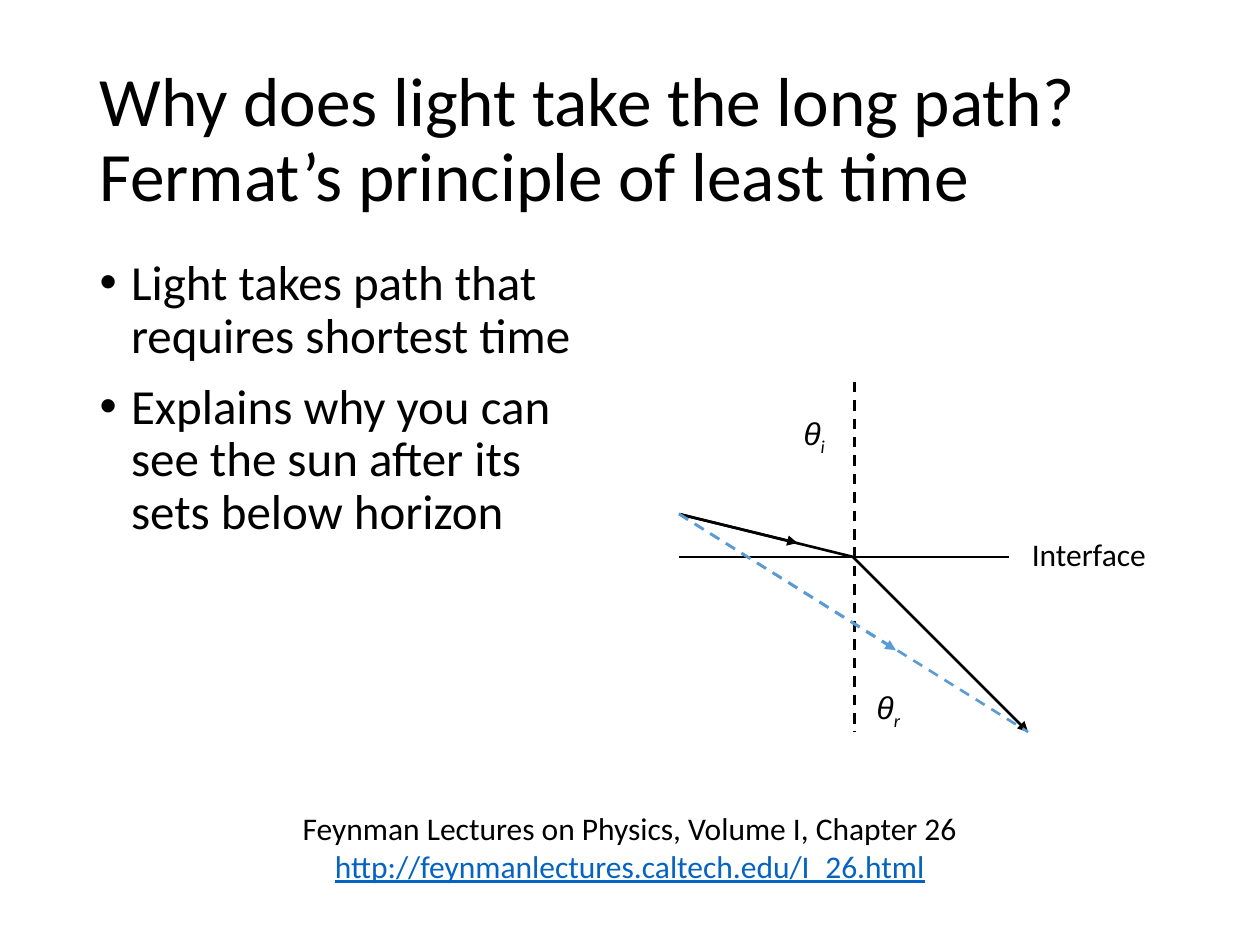
"""Build a slide on Fermat's principle of least time."""
from dataclasses import dataclass
from typing import NamedTuple

from lxml.etree import SubElement
from pptx import Presentation
from pptx.dml.color import RGBColor as Rgb
from pptx.enum.dml import MSO_LINE_DASH_STYLE as Dash
from pptx.enum.shapes import MSO_CONNECTOR_TYPE as Link
from pptx.enum.text import MSO_ANCHOR as Anchor
from pptx.enum.text import MSO_AUTO_SIZE as Fit
from pptx.enum.text import PP_ALIGN as Align
from pptx.oxml.ns import qn
from pptx.util import Inches, Pt

COLS, ROWS = 100, 75
WIDE, HIGH = Inches(10), Inches(7.5)


@dataclass(frozen=True)
class Theme:
    ink: Rgb = Rgb.from_string("000000")
    blue: Rgb = Rgb.from_string("5B9BD5")
    link: Rgb = Rgb.from_string("0563C1")
    face: str = "Calibri"
    greek: str = "Arial"
    title: float = 39.6
    body: float = 28
    note: float = 18
    line: float = 1.5


THEME = Theme()


class Spot(NamedTuple):
    col: float
    row: float


class Area(NamedTuple):
    col: float
    row: float
    cols: float
    rows: float


class Run(NamedTuple):
    text: str
    size: float = THEME.note
    face: str = THEME.face
    color: Rgb = THEME.ink
    slant: bool = False
    under: bool = False
    base: int = 0


class Ray(NamedTuple):
    start: Spot
    end: Spot
    color: Rgb = THEME.ink
    dash: bool = False
    arrow: bool = False


class Label(NamedTuple):
    area: Area
    lines: list[list[Run]]
    align: Align = Align.LEFT


def across(cols: float) -> int:
    return round(WIDE * cols / COLS)


def down(rows: float) -> int:
    return round(HIGH * rows / ROWS)


def place(shape, area: Area) -> None:
    shape.left, shape.top = across(area.col), down(area.row)
    shape.width, shape.height = across(area.cols), down(area.rows)


def add_run(para, run: Run) -> None:
    item = para.add_run()
    item.text = run.text
    font = item.font
    font.size, font.name = Pt(run.size), run.face
    font.color.rgb = run.color
    if run.slant:
        font.italic = True
    if run.under:
        font.underline = True
    if run.base:
        item._r.get_or_add_rPr().set("baseline", str(run.base * 1000))


def add_para(frame, index: int):
    return frame.add_paragraph() if index else frame.paragraphs[0]


def draw_title(shape, area: Area, lines: list[str]) -> None:
    place(shape, area)
    frame = shape.text_frame
    frame.auto_size, frame.vertical_anchor = Fit.NONE, Anchor.MIDDLE
    para = frame.paragraphs[0]
    para.alignment, para.line_spacing = Align.LEFT, 0.9
    for index, text in enumerate(lines):
        if index:
            para.add_line_break()
        add_run(para, Run(text, THEME.title))


def draw_list(shape, area: Area, items: list[str]) -> None:
    place(shape, area)
    frame = shape.text_frame
    frame.auto_size = Fit.NONE
    for index, text in enumerate(items):
        para = add_para(frame, index)
        props = para._p.get_or_add_pPr()
        props.set("marL", str(Inches(0.25)))
        props.set("indent", str(-Inches(0.25)))
        SubElement(props, qn("a:buFont")).set("typeface", THEME.greek)
        SubElement(props, qn("a:buChar")).set("char", "•")
        para.line_spacing = 0.9
        para.space_before = Pt(10 if index else 0)
        add_run(para, Run(text, THEME.body))


def draw_label(slide, label: Label) -> None:
    box = slide.shapes.add_textbox(0, 0, 0, 0)
    place(box, label.area)
    frame = box.text_frame
    frame.word_wrap, frame.auto_size = False, Fit.SHAPE_TO_FIT_TEXT
    for index, runs in enumerate(label.lines):
        para = add_para(frame, index)
        para.alignment = label.align
        for run in runs:
            add_run(para, run)


def draw_ray(slide, ray: Ray) -> None:
    line = slide.shapes.add_connector(
        Link.STRAIGHT, across(ray.start.col), down(ray.start.row),
        across(ray.end.col), down(ray.end.row))
    line.line.color.rgb = ray.color
    line.line.width = Pt(THEME.line)
    if ray.dash:
        line.line.dash_style = Dash.DASH
    if ray.arrow:
        SubElement(line.line._get_or_add_ln(), qn("a:tailEnd")).set("type", "triangle")
    SubElement(line._element.spPr, qn("a:effectLst"))


def angle(sub: str) -> list[Run]:
    return [Run("θ", face=THEME.greek, slant=True), Run(sub, slant=True, base=-25)]


def main() -> None:
    deck = Presentation()
    deck.slide_width, deck.slide_height = WIDE, HIGH
    slide = deck.slides.add_slide(deck.slide_layouts[1])
    title, body = slide.placeholders
    draw_title(title, Area(6.9, 4, 86.2, 14.5), [
        "Why does light take the long path?",
        "Fermat’s principle of least time"])
    draw_list(body, Area(6.9, 20, 42.5, 47.6), [
        "Light takes path that requires shortest time",
        "Explains why you can see the sun after its sets below horizon"])

    source, cross, goal = Spot(53.9, 40.8), Spot(67.7, 44.2), Spot(81.6, 58.1)
    for ray in (
        Ray(source, cross),
        Ray(source, Spot(63.3, 43.1), arrow=True),
        Ray(Spot(source.col, cross.row), Spot(80.1, cross.row)),
        Ray(Spot(67.8, 30.3), Spot(67.8, goal.row), dash=True),
        Ray(cross, goal, arrow=True),
        Ray(source, goal, THEME.blue, dash=True),
        Ray(source, Spot(71.1, 51.6), THEME.blue, dash=True, arrow=True),
    ):
        draw_ray(slide, ray)

    for label in (
        Label(Area(62.8, 32.4, 3.7, 4), [angle("i")]),
        Label(Area(68.6, 54.1, 3.9, 4), [angle("r")]),
        Label(Area(80.9, 42, 11.2, 4), [[Run("Interface")]]),
        Label(Area(22.7, 63.7, 54.6, 7.1), [
            [Run("Feynman Lectures on Physics, Volume I, Chapter 26")],
            [Run("http://feynmanlectures.caltech.edu/I_26.html",
                 color=THEME.link, under=True)]], Align.CENTER),
    ):
        draw_label(slide, label)
    deck.save("out.pptx")


if __name__ == "__main__":
    main()
